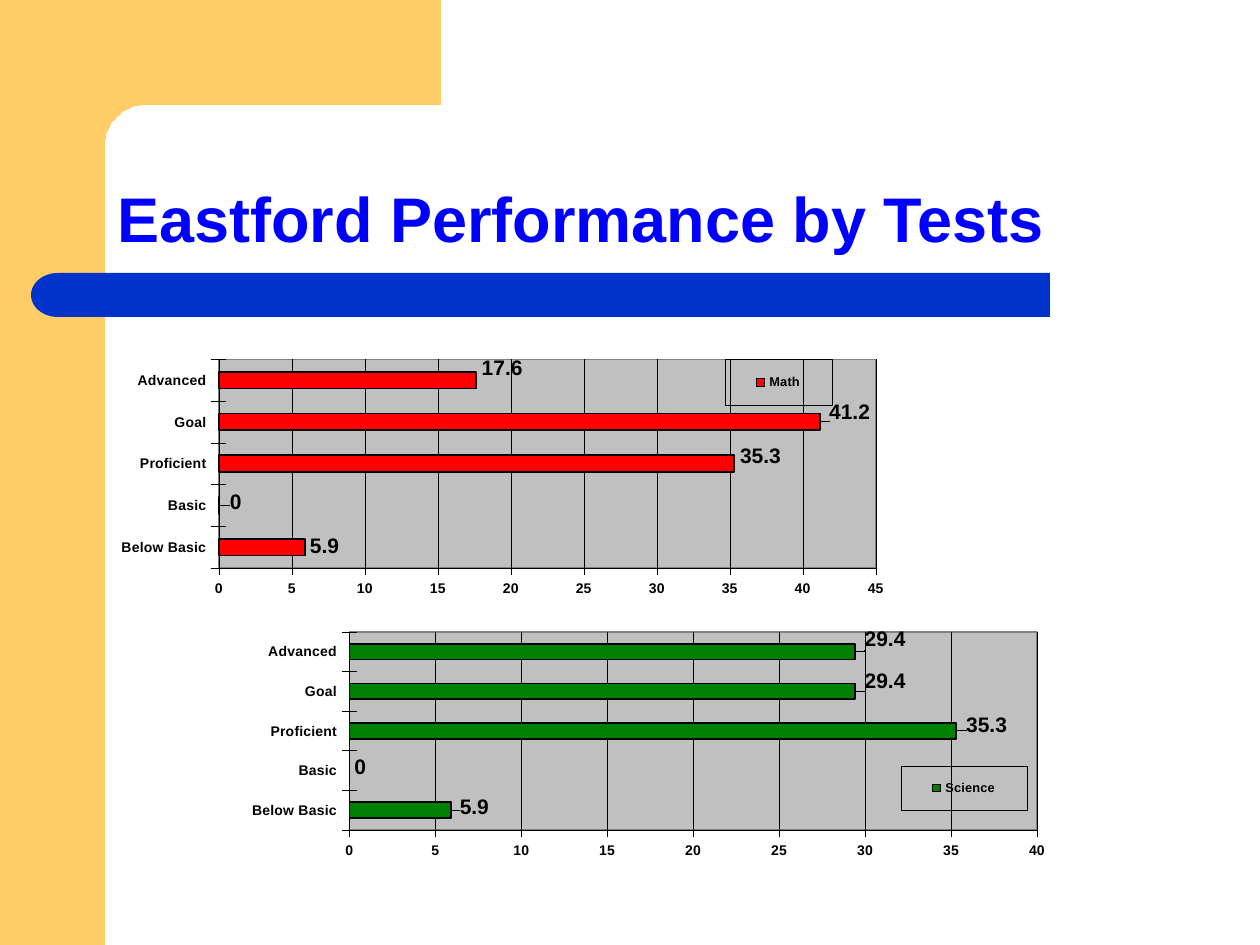
from math import cos, sin, radians
from lxml import etree
from pptx import Presentation
from pptx.chart.data import CategoryChartData
from pptx.dml.color import RGBColor
from pptx.enum.chart import XL_CHART_TYPE as CHART, XL_LABEL_POSITION as LABEL
from pptx.enum.chart import XL_LEGEND_POSITION as LEGEND, XL_TICK_LABEL_POSITION as TICK_LABEL
from pptx.enum.chart import XL_TICK_MARK as TICK
from pptx.enum.shapes import MSO_SHAPE as SHAPE
from pptx.enum.text import MSO_ANCHOR as ANCHOR
from pptx.oxml import parse_xml
from pptx.oxml.ns import nsdecls
from pptx.util import Pt

PX = 914400 // 126
BLACK = "000000"


def paint(target, color):
    target.solid()
    target.fore_color.rgb = RGBColor.from_string(color)


def layout(x, y, w=None, h=None, inner=False):
    root = etree.fromstring(f'<c:layout {nsdecls("c")}><c:manualLayout/></c:layout>')
    tags = [("layoutTarget", "inner")] if inner else []
    if w:
        tags += [("xMode", "edge"), ("yMode", "edge")]
    tags += [("x", x), ("y", y)]
    if w:
        tags += [("w", w), ("h", h)]
    children = "".join(f'<c:{tag} val="{value}"/>' for tag, value in tags)
    manual = f'<c:manualLayout {nsdecls("c")}>{children}</c:manualLayout>'
    root.replace(root[0], etree.fromstring(manual))
    return parse_xml(etree.tostring(root))


prs = Presentation()
prs.slide_width, prs.slide_height = 1260 * PX, 945 * PX
slide = prs.slides.add_slide(prs.slide_layouts[6])
shapes = slide.shapes

side_band = shapes.add_shape(SHAPE.RECTANGLE, 0, 0, 105 * PX, 945 * PX)
corner = [(146 - 41 * cos(radians(a)), 146 - 41 * sin(radians(a))) for a in range(90, -1, -5)]
outline = shapes.build_freeform(63, 0, scale=PX)
outline.add_line_segments([(441, 0), (441, 105), *corner, (105, 161), (63, 161)])
top_band = outline.convert_to_shape()
rule = shapes.add_shape(SHAPE.RECTANGLE, 84 * PX, 273 * PX, 966 * PX, 44 * PX)
rule_cap = shapes.add_shape(SHAPE.FLOWCHART_DELAY, 31 * PX, 273 * PX, 54 * PX, 44 * PX)
rule_cap.rotation = 180
for band, color in [(side_band, "FFCC66"), (top_band, "FFCC66"),
                    (rule, "0033CC"), (rule_cap, "0033CC")]:
    paint(band.fill, color)
    band.line.fill.background()
    band.shadow.inherit = False

title = shapes.add_textbox(105 * PX, 105 * PX, 1092 * PX, 157 * PX).text_frame
title.word_wrap = True
title.vertical_anchor = ANCHOR.BOTTOM
heading = title.paragraphs[0]
heading.text = "Eastford Performance by Tests"
heading.line_spacing = 0.9
heading.font.name, heading.font.size, heading.font.bold = "Arial", Pt(36), True
paint(heading.font.fill, "0000FF")

levels = ["Below Basic", "Basic", "Proficient", "Goal", "Advanced"]
tests = [
    ("Math", "FF0000", [5.9, 0, 35.3, 41.2, 17.6], 45, (84, 357, 816, 252),
     (219, 359, 657, 209), (725, 359, 107, 46),
     [(0, -1), (6, -3), (1, -7), (4, -10), (1, -12)]),
    ("Science", "008000", [5.9, 0, 35.3, 29.4, 29.4], 40, (252, 620, 858, 252),
     (349, 632, 688, 198), (901, 766, 126, 44),
     [(4, -3), (0, -3), (5, -6), (5, -10), (5, -12)]),
]
for test, color, scores, top_score, frame, plot_box, legend_box, nudges in tests:
    left, top, width, height = frame
    data = CategoryChartData()
    data.categories = levels
    data.add_series(test, scores)
    chart = shapes.add_chart(CHART.BAR_CLUSTERED, *[n * PX for n in frame], data).chart
    chart.has_title = False
    chart.font.name, chart.font.size, chart.font.bold = "Arial", Pt(8), True
    paint(chart.font.fill, BLACK)

    level_axis, score_axis = chart.category_axis, chart.value_axis
    score_axis.minimum_scale, score_axis.maximum_scale = 0, top_score
    score_axis.major_unit = 5
    score_axis.has_major_gridlines = True
    level_axis.tick_label_position = TICK_LABEL.LOW
    for axis in (level_axis, score_axis):
        axis.major_tick_mark = TICK.CROSS
        axis.minor_tick_mark = TICK.NONE
    for line in (level_axis.format.line, score_axis.format.line,
                 score_axis.major_gridlines.format.line):
        paint(line.fill, BLACK)
        line.width = Pt(0.25)

    plot = chart.plots[0]
    plot.gap_width = 150
    plot.vary_by_categories = False
    bars = plot.series[0]
    bars.invert_if_negative = False
    paint(bars.format.fill, color)
    paint(bars.format.line.fill, BLACK)
    bars.format.line.width = Pt(1)
    for i, (dx, dy) in enumerate(nudges):
        label = bars.points[i].data_label
        label.font.name, label.font.size, label.font.bold = "Arial", Pt(12), True
        paint(label.font.fill, BLACK)
        label.position = LABEL.OUTSIDE_END
    for spot, (dx, dy) in zip(bars.data_labels._element.findall("{*}dLbl"), nudges):
        spot.insert(1, layout(round(dx / width, 4), round(dy / height, 4)))

    chart.has_legend = True
    legend = chart.legend
    legend.position = LEGEND.RIGHT
    legend.include_in_layout = True
    legend.font.name, legend.font.size, legend.font.bold = "Arial", Pt(7.3), True
    paint(legend.font.fill, BLACK)
    area = chart._chartSpace.chart.plotArea
    for part, box, place in [(area, plot_box, 0), (legend._element, legend_box, 1)]:
        for old in part.findall("{*}layout"):
            part.remove(old)
        x, y, w, h = box
        ratios = (x - left) / width, (y - top) / height, w / width, h / height
        part.insert(place, layout(*[round(r, 4) for r in ratios], inner=part is area))

    area.append(parse_xml(
        f'<c:spPr {nsdecls("c", "a")}><a:solidFill><a:srgbClr val="C0C0C0"/></a:solidFill>'
        '<a:ln w="9525"><a:solidFill><a:srgbClr val="808080"/></a:solidFill></a:ln></c:spPr>'))
    legend._element.find("{*}overlay").addnext(parse_xml(
        f'<c:spPr {nsdecls("c", "a")}><a:noFill/><a:ln w="3175"><a:solidFill>'
        f'<a:srgbClr val="{BLACK}"/></a:solidFill></a:ln></c:spPr>'))

prs.save("out.pptx")
